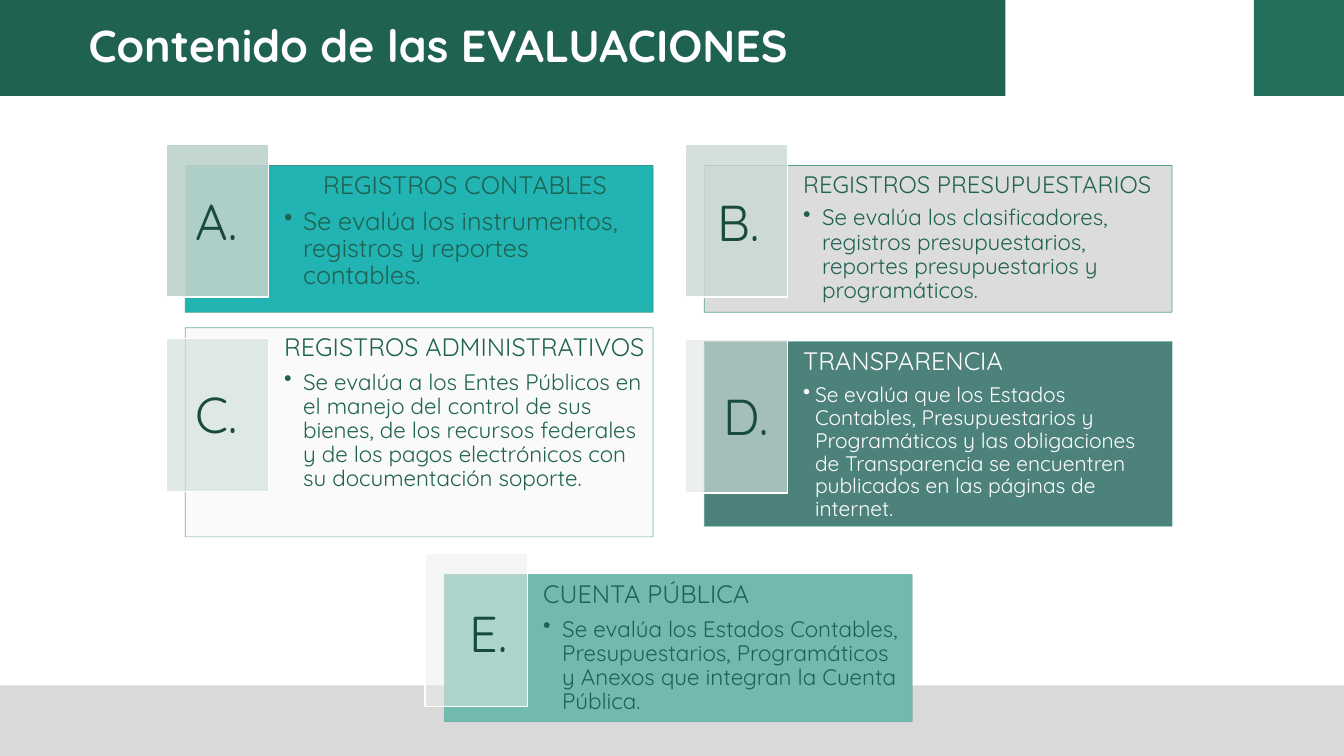
from dataclasses import dataclass

from lxml import etree
from pptx import Presentation
from pptx.dml.color import RGBColor
from pptx.enum import shapes, text
from pptx.oxml import ns
from pptx.util import Cm, Pt

FONT = "Quicksand"
WHITE = RGBColor(0xFF, 0xFF, 0xFF)
GREEN = RGBColor(0x20, 0x62, 0x52)
DARK_GREEN = RGBColor(0x18, 0x4A, 0x3E)
CORNER_GREEN = RGBColor(0x24, 0x6E, 0x5C)
BORDER_GREEN = RGBColor(0x30, 0x93, 0x7B)
GRAY = RGBColor(0xD9, 0xD9, 0xD9)

SLIDE_W, SLIDE_H = 33.87, 19.05
BAND_H = 2.42
LEFT_COL, RIGHT_COL, CENTER_COL = 4.67, 17.75, 11.2
PANEL_W = 11.79
TAB_W, TAB_H, TAB_OVERHANG = 2.59, 3.86, 0.49
LETTER_W, LETTER_H = 1.88, 1.81


@dataclass
class Card:
    letter: str
    heading: str
    body: str
    left: float
    top: float
    height: float
    panel_color: str
    tab_color: str
    tab_top: float
    letter_at: tuple
    opacity: int
    panel_opacity: int = 100
    heading_size: int = 18
    body_size: int = 16
    color: RGBColor = GREEN
    hanging: float = 0.48
    heading_align: text.PP_ALIGN = text.PP_ALIGN.LEFT


CARDS = [
    Card("A.", "REGISTROS CONTABLES",
         "Se evalúa los instrumentos, registros y reportes contables.",
         LEFT_COL, 4.17, 3.7, "09ACAA", "BED2CB", 3.63, (4.52, 4.67), 90,
         panel_opacity=90, body_size=18, heading_align=text.PP_ALIGN.CENTER),
    Card("B.", "REGISTROS PRESUPUESTARIOS",
         "Se evalúa los clasificadores, registros presupuestarios, reportes "
         "presupuestarios y programáticos.",
         RIGHT_COL, 4.17, 3.7, "DCDCDC", "C9D9D3", 3.63, (17.68, 4.7), 80,
         heading_size=17),
    Card("C.", "REGISTROS ADMINISTRATIVOS",
         "Se evalúa a los Entes Públicos en el manejo del control de sus bienes, "
         "de los recursos federales y de los pagos electrónicos con su "
         "documentación soporte.",
         LEFT_COL, 8.26, 5.27, "FAFBF8", "D3E0DC", 8.53, (4.52, 9.53), 70),
    Card("D.", "TRANSPARENCIA",
         "Se evalúa que los Estados Contables, Presupuestarios y Programáticos y "
         "las obligaciones de Transparencia se encuentren publicados en las "
         "páginas de internet.",
         RIGHT_COL, 8.61, 4.65, "4D827C", "DEE7E4", 8.56, (17.86, 9.58), 60,
         body_size=15, color=WHITE, hanging=0.3),
    Card("E.", "CUENTA PÚBLICA",
         "Se evalúa los Estados Contables, Presupuestarios, Programáticos y "
         "Anexos que integran la Cuenta Pública.",
         CENTER_COL, 14.48, 3.7, "72BAAF", "E8EEEC", 13.94, (11.38, 15.04), 50),
]


def set_opacity(parent, percent):
    """Make the solid fill directly under parent partly transparent."""
    color = parent.find(ns.qn("a:solidFill")).find(ns.qn("a:srgbClr"))
    etree.SubElement(color, ns.qn("a:alpha")).set("val", str(percent * 1000))


def write(paragraph, words, *, size, color, bold=False, align=text.PP_ALIGN.LEFT,
          line_spacing=None, after=0, margin=0, indent=0, bullet=None):
    paragraph.alignment = align
    paragraph.line_spacing = line_spacing
    paragraph.space_after = Pt(after)
    run = paragraph.add_run()
    run.text = words
    run.font.name, run.font.size, run.font.bold = FONT, Pt(size), bold
    run.font.color.rgb = color
    properties = paragraph._p.get_or_add_pPr()
    properties.set("marL", str(Cm(margin)))
    properties.set("indent", str(Cm(indent)))
    if bullet:
        etree.SubElement(properties, ns.qn("a:buChar")).set("char", bullet)


class SlideBuilder:
    def __init__(self, slide):
        self.slide = slide

    def title(self, words, width, height):
        heading = self.slide.shapes.title
        heading.left, heading.top = Cm(0), Cm(0)
        heading.width, heading.height = Cm(width), Cm(height)
        heading.fill.solid()
        heading.fill.fore_color.rgb = GREEN
        frame = heading.text_frame
        frame.auto_size = text.MSO_AUTO_SIZE.NONE
        frame.vertical_anchor = text.MSO_ANCHOR.MIDDLE
        write(frame.paragraphs[0], words, size=32, color=WHITE, bold=True,
              line_spacing=0.9, margin=1.98)

    def box(self, left, top, width, height, fill, opacity=100,
            line=None, line_width=1, line_opacity=100):
        rect = self.slide.shapes.add_shape(
            shapes.MSO_SHAPE.RECTANGLE, Cm(left), Cm(top), Cm(width), Cm(height))
        rect.shadow.inherit = False
        rect.fill.solid()
        rect.fill.fore_color.rgb = fill
        properties = rect.element.spPr
        if opacity < 100:
            set_opacity(properties, opacity)
        if line is None:
            rect.line.fill.background()
            return
        rect.line.color.rgb = line
        rect.line.width = Pt(line_width)
        if line_opacity < 100:
            set_opacity(properties.find(ns.qn("a:ln")), line_opacity)

    def text_frame(self, left, top, width, height):
        frame = self.slide.shapes.add_textbox(
            Cm(left), Cm(top), Cm(width), Cm(height)).text_frame
        frame.word_wrap = True
        return frame

    def card(self, card):
        area = (card.left, card.top, PANEL_W, card.height)
        self.box(*area, RGBColor.from_string(card.panel_color), card.panel_opacity,
                 BORDER_GREEN, 0.5, card.opacity)
        frame = self.text_frame(*area)
        frame.margin_left = Cm(2.49)
        frame.margin_top = frame.margin_right = frame.margin_bottom = Cm(0.18)
        write(frame.paragraphs[0], card.heading, size=card.heading_size,
              color=card.color, align=card.heading_align, line_spacing=0.9,
              after=0.35 * card.heading_size)
        item = frame.add_paragraph()
        item.level = 1
        write(item, card.body, size=card.body_size, color=card.color,
              line_spacing=0.9, after=0.15 * card.body_size,
              margin=card.hanging, indent=-card.hanging, bullet="•")
        self.box(card.left - TAB_OVERHANG, card.tab_top, TAB_W, TAB_H,
                 RGBColor.from_string(card.tab_color), card.opacity, WHITE)

    def letter(self, card):
        frame = self.text_frame(*card.letter_at, LETTER_W, LETTER_H)
        frame.auto_size = text.MSO_AUTO_SIZE.SHAPE_TO_FIT_TEXT
        write(frame.paragraphs[0], card.letter, size=36, color=DARK_GREEN,
              align=text.PP_ALIGN.CENTER)


def main():
    deck = Presentation()
    deck.slide_width, deck.slide_height = Cm(SLIDE_W), Cm(SLIDE_H)
    builder = SlideBuilder(deck.slides.add_slide(deck.slide_layouts[5]))
    builder.title("Contenido de las EVALUACIONES", 25.34, BAND_H)
    builder.box(31.6, 0, SLIDE_W - 31.6, BAND_H, CORNER_GREEN)
    builder.box(0, 17.27, SLIDE_W, SLIDE_H - 17.27, GRAY)
    for card in CARDS:
        builder.card(card)
    for card in CARDS:
        builder.letter(card)
    deck.save("out.pptx")


if __name__ == "__main__":
    main()
